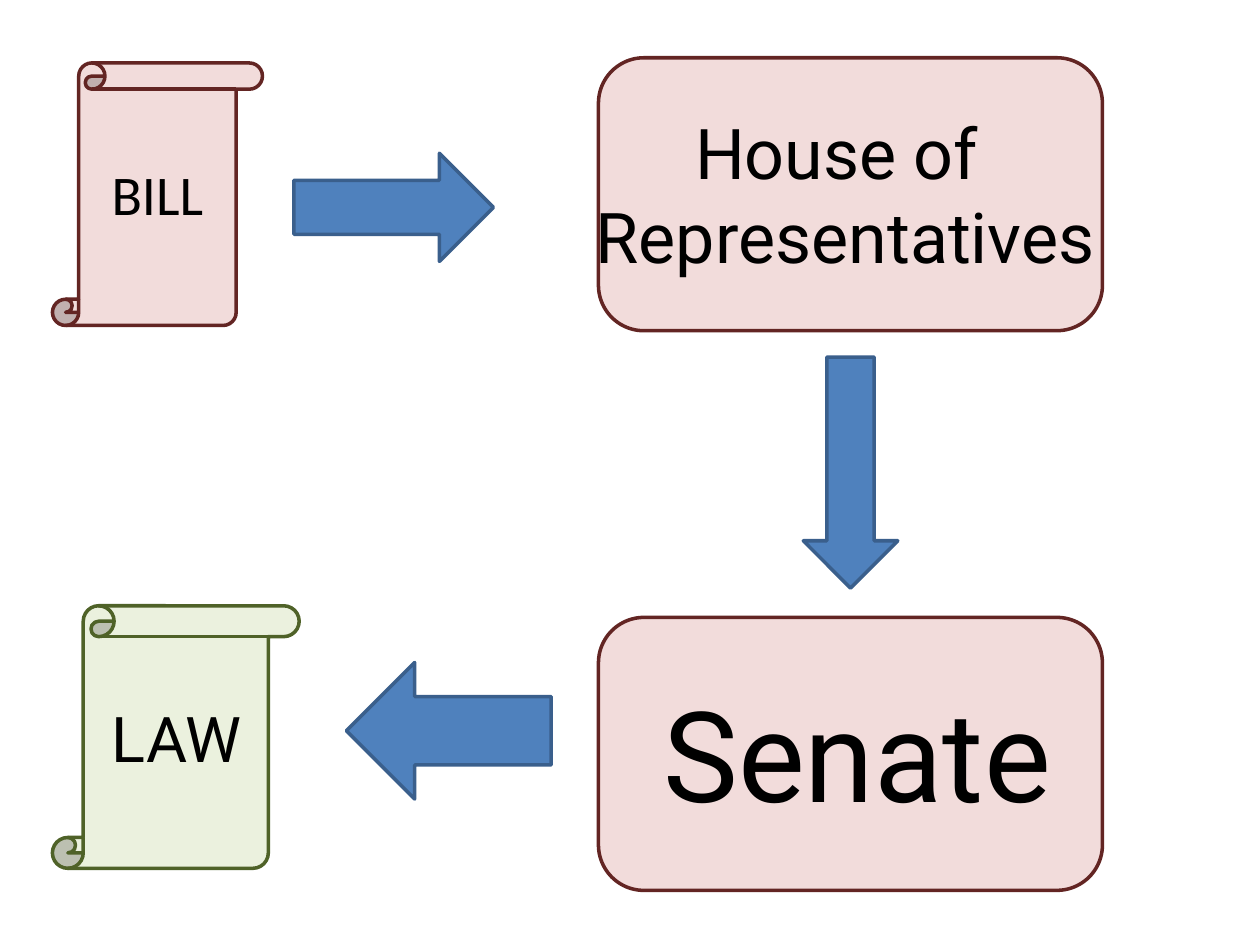
import pptx
import pptx.dml.color
import pptx.enum.shapes
import pptx.enum.text
import pptx.util

RGBColor = pptx.dml.color.RGBColor
SHAPES = pptx.enum.shapes.MSO_SHAPE
ALIGN = pptx.enum.text.PP_ALIGN

BLACK = RGBColor(0x00, 0x00, 0x00)
PINK = RGBColor(0xF2, 0xDC, 0xDB)
MAROON = RGBColor(0x63, 0x25, 0x23)
BLUE = RGBColor(0x4F, 0x81, 0xBD)
DARK_BLUE = RGBColor(0x3A, 0x5F, 0x8C)
PALE_GREEN = RGBColor(0xEB, 0xF1, 0xDE)
DARK_GREEN = RGBColor(0x4F, 0x62, 0x28)

CELLS_PER_INCH = 12
CHAMBER_SIZE = (48, 26)


def grid(*cells):
    """Turn grid columns and rows into slide lengths."""
    return [pptx.util.Inches(cell / CELLS_PER_INCH) for cell in cells]


def set_values(target, values):
    """Set each attribute of the target from a dict."""
    for name, value in values.items():
        setattr(target, name, value)


def add_figure(slide, kind, place, fill, line):
    """Add a filled, outlined preset shape."""
    shape = slide.shapes.add_shape(kind, *grid(*place))
    shape.shadow.inherit = False
    shape.fill.solid()
    shape.fill.fore_color.rgb = fill
    shape.line.color.rgb = line
    shape.line.width = pptx.util.Pt(2)


def add_label(slide, place, lines, size, font="Roboto", alignment=ALIGN.CENTER):
    """Add a text box with one paragraph per line."""
    frame = slide.shapes.add_textbox(*grid(*place)).text_frame
    set_values(frame, {
        "word_wrap": True,
        "auto_size": pptx.enum.text.MSO_AUTO_SIZE.SHAPE_TO_FIT_TEXT,
        "text": "\n".join(lines),
    })
    for paragraph in frame.paragraphs:
        paragraph.alignment = alignment
        for run in paragraph.runs:
            set_values(run.font, {"name": font, "size": pptx.util.Pt(size)})
            run.font.color.rgb = BLACK


def add_chambers(slide):
    """Add the two chambers with their names."""
    for top in (5.5, 58.8):
        add_figure(slide, SHAPES.ROUNDED_RECTANGLE, (57, top, *CHAMBER_SIZE), PINK, MAROON)
    add_label(slide, (54, 9.8, 53, 17.4), ["House of ", "Representatives"], 40)
    add_label(slide, (62, 63.8, 41, 15.7), ["Senate"], 72, alignment=ALIGN.LEFT)


def add_scrolls(slide):
    """Add the bill and the law as scrolls."""
    add_figure(slide, SHAPES.VERTICAL_SCROLL, (5, 6, 20, 25), PINK, MAROON)
    add_label(slide, (9, 14.6, 12, 7.7), ["BILL"], 32, font="Calibri")
    add_figure(slide, SHAPES.VERTICAL_SCROLL, (5, 57.7, 23.5, 25), PALE_GREEN, DARK_GREEN)
    add_label(slide, (8.8, 66, 16, 8.5), ["LAW"], 36)


def add_arrows(slide):
    """Add the block arrows that lead from bill to law."""
    arrows = [
        (SHAPES.RIGHT_ARROW, (28, 14.6, 19, 10.3)),
        (SHAPES.DOWN_ARROW, (76.5, 34, 9, 22)),
        (SHAPES.LEFT_ARROW, (33, 63.1, 19.5, 13)),
    ]
    for kind, place in arrows:
        add_figure(slide, kind, place, BLUE, DARK_BLUE)


def main():
    """Build the slide and save it."""
    presentation = pptx.Presentation()
    set_values(presentation, {
        "slide_width": pptx.util.Inches(10),
        "slide_height": pptx.util.Inches(7.5),
    })
    slide = presentation.slides.add_slide(presentation.slide_layouts[6])
    add_chambers(slide)
    add_scrolls(slide)
    add_arrows(slide)
    presentation.save("out.pptx")


if __name__ == "__main__":
    main()
